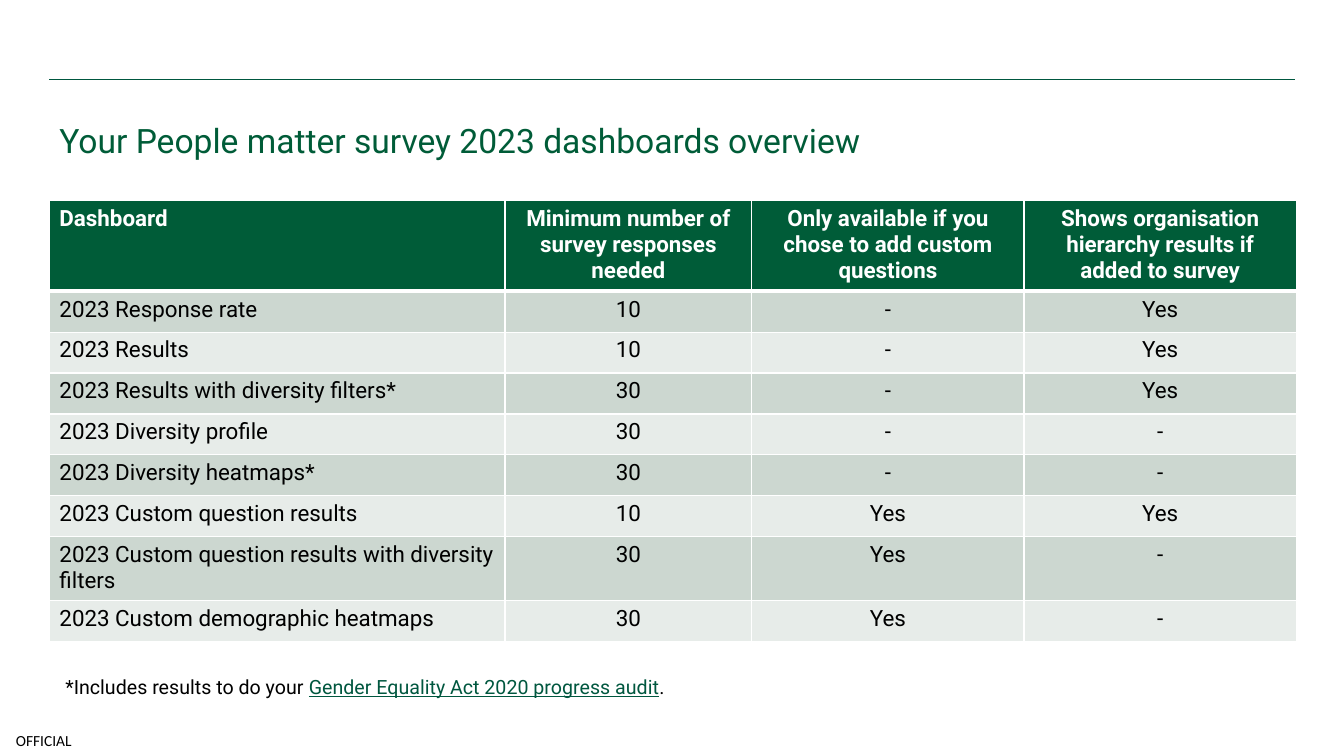
from pptx import Presentation
from pptx.dml.color import RGBColor
from pptx.enum.shapes import MSO_CONNECTOR
from pptx.enum.text import MSO_ANCHOR, PP_ALIGN
from pptx.oxml import parse_xml
from pptx.oxml.ns import nsdecls, qn
from pptx.util import Pt
from lxml import etree

LEFT, CENTER = PP_ALIGN.LEFT, PP_ALIGN.CENTER
TOP, MIDDLE = MSO_ANCHOR.TOP, MSO_ANCHOR.MIDDLE
STRAIGHT = MSO_CONNECTOR.STRAIGHT

# Content
TITLE = "Your People matter survey 2023 dashboards overview"
HEADINGS = (
    "Dashboard",
    "Minimum number of survey responses needed",
    "Only available if you chose to add custom questions",
    "Shows organisation hierarchy results if added to survey",
)
DASHBOARDS = [
    ("2023 Response rate", "10", "-", "Yes"),
    ("2023 Results", "10", "-", "Yes"),
    ("2023 Results with diversity filters*", "30", "-", "Yes"),
    ("2023 Diversity profile", "30", "-", "-"),
    ("2023 Diversity heatmaps*", "30", "-", "-"),
    ("2023 Custom question results", "10", "Yes", "Yes"),
    ("2023 Custom question results with diversity filters", "30", "Yes", "-"),
    ("2023 Custom demographic heatmaps", "30", "Yes", "-"),
]
FOOTNOTE = ("*Includes results to do your ", "Gender Equality Act 2020 progress audit", ".")
MARKING = "OFFICIAL"

# Look
GREEN, RULE_GREEN, BLACK, WHITE = "005C38", "00573F", "000000", "FFFFFF"
BANDS = ("CCD7D0", "E7ECE9")
MARGIN, CONTENT_WIDTH = 35.3, 889.9
COLUMN_WIDTHS = (325.4, 176.4, 194.4, 194.4)
TABLE_TOP, TABLE_HEIGHT, ROW_HEIGHT = 143.3, 314.6, 29.2


def color(value):
    return RGBColor.from_string(value)


def add_run(paragraph, text, hue, **formats):
    run = paragraph.add_run()
    run.text = text
    run.font.color.rgb = color(hue)
    for name, value in {"name": "Roboto", **formats}.items():
        setattr(run.font, name, value)


def add_text(box, runs, anchor=TOP, align=LEFT, wrap=True, inset=None):
    frame = slide.shapes.add_textbox(*map(Pt, box)).text_frame
    frame.word_wrap = wrap
    frame.vertical_anchor = anchor
    if inset is not None:
        for side in ("left", "top", "right", "bottom"):
            setattr(frame, "margin_" + side, Pt(inset))
    paragraph = frame.paragraphs[0]
    paragraph.alignment = align
    for text, hue, formats in runs:
        add_run(paragraph, text, hue, **formats)
    return paragraph


def add_borders(cell, bottom):
    widths = {"lnL": 1, "lnR": 1, "lnT": 1, "lnB": bottom}
    for position, (tag, width) in enumerate(widths.items()):
        border = parse_xml(
            f'<a:{tag} {nsdecls("a")} w="{Pt(width)}"><a:solidFill>'
            f'<a:srgbClr val="{WHITE}"/></a:solidFill></a:{tag}>')
        cell._tc.get_or_add_tcPr().insert(position, border)


deck = Presentation()
deck.slide_width, deck.slide_height = Pt(960), Pt(540)
slide = deck.slides.add_slide(deck.slide_layouts[6])

# Top rule and marking
rule = slide.shapes.add_connector(
    STRAIGHT, Pt(MARGIN), Pt(56.6), Pt(MARGIN + CONTENT_WIDTH), Pt(56.6))
rule.line.color.rgb = color(RULE_GREEN)
rule.line.width = Pt(1)
etree.SubElement(rule._element.spPr, qn("a:effectLst"))
add_text((0, 517.7, 62.6, 22.3), [(MARKING, BLACK, {"name": "Calibri", "size": Pt(11)})],
         anchor=MIDDLE, align=CENTER, wrap=False, inset=0)

# Title
title = add_text((MARGIN, 64.1, CONTENT_WIDTH, 65.5), [(TITLE, GREEN, {"size": Pt(24)})],
                 anchor=MIDDLE)
title.line_spacing = 1.2

# Dashboard table
rows = [HEADINGS] + DASHBOARDS
table_frame = slide.shapes.add_table(
    len(rows), len(HEADINGS), Pt(MARGIN), Pt(TABLE_TOP), Pt(CONTENT_WIDTH), Pt(TABLE_HEIGHT))
table = table_frame.table
for column, width in zip(table.columns, COLUMN_WIDTHS):
    column.width = Pt(width)
for r, row in enumerate(rows):
    table.rows[r].height = Pt(ROW_HEIGHT)
    heading = r == 0
    for c, text in enumerate(row):
        cell = table.cell(r, c)
        cell.fill.solid()
        cell.fill.fore_color.rgb = color(GREEN if heading else BANDS[(r - 1) % 2])
        add_borders(cell, 3 if heading else 1)
        paragraph = cell.text_frame.paragraphs[0]
        paragraph.alignment = CENTER if c else LEFT
        add_run(paragraph, text, WHITE if heading else BLACK, size=Pt(16), bold=heading)
table_frame.height = Pt(TABLE_HEIGHT)

# Footnote
lead, act, stop = FOOTNOTE
add_text((39.6, 478.8, 869.8, 24.5), [
    (lead, BLACK, {"size": Pt(14)}),
    (act, RULE_GREEN, {"size": Pt(14), "underline": True}),
    (stop, BLACK, {"size": Pt(14)}),
])

deck.save("out.pptx")
